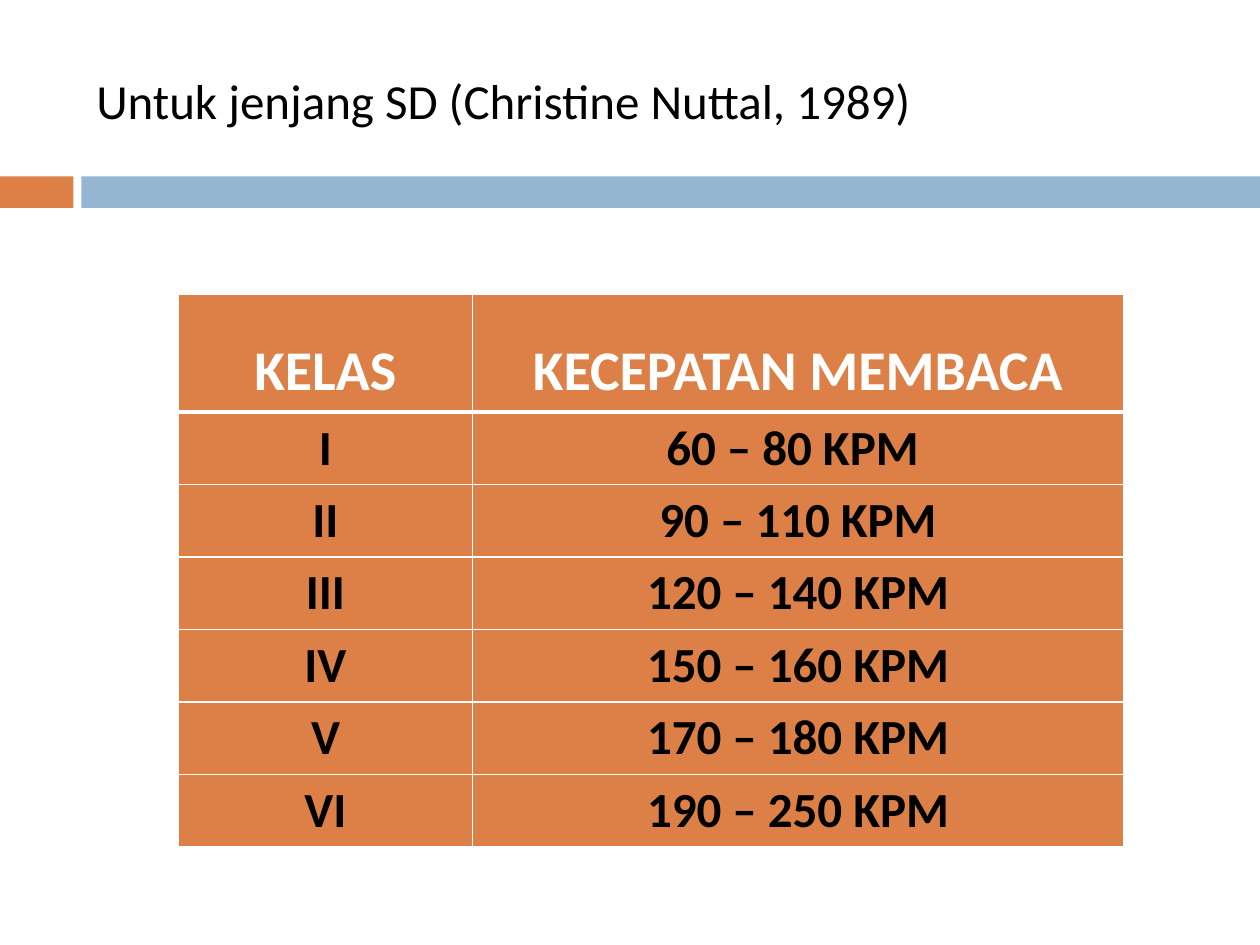
from lxml import etree
from pptx import Presentation
from pptx.dml.color import RGBColor
from pptx.enum.shapes import MSO_SHAPE
from pptx.enum.text import MSO_ANCHOR as ANCHOR, PP_ALIGN as ALIGN
from pptx.oxml.ns import qn
from pptx.util import Pt

COLORS = {"orange": "DD8047", "blue": "94B6D2", "white": "FFFFFF", "black": "000000"}


def rgb(name):
    return RGBColor.from_string(COLORS[name])


def put_text(tf, text, size=28, color="black", bold=False, align=ALIGN.LEFT):
    tf.word_wrap = True
    p = tf.paragraphs[0]
    p.alignment = align
    r = p.add_run()
    r.text = text
    r.font.name = "Calibri"
    r.font.size = Pt(size)
    r.font.bold = bold
    r.font.color.rgb = rgb(color)


prs = Presentation()
prs.slide_width, prs.slide_height = Pt(720), Pt(540)
s = prs.slides.add_slide(prs.slide_layouts[6])

# Band under the title
for left, width, color in [(0, 42, "orange"), (46.5, 673.5, "blue")]:
    sp = s.shapes.add_shape(MSO_SHAPE.RECTANGLE, Pt(left), Pt(100.8), Pt(width), Pt(18))
    sp.shadow.inherit = False
    sp.fill.solid()
    sp.fill.fore_color.rgb = rgb(color)
    sp.line.fill.background()

# Title
title = s.shapes.add_textbox(Pt(48), Pt(18), Pt(642), Pt(78))
title.text_frame.vertical_anchor = ANCHOR.MIDDLE
put_text(title.text_frame, "Untuk jenjang SD (Christine Nuttal, 1989)")

# Reading speed table
rows = [
    ("KELAS", "KECEPATAN MEMBACA"),
    ("I", "60 – 80 KPM "),
    ("II", "90 – 110 KPM"),
    ("III", "120 – 140 KPM"),
    ("IV", "150 – 160 KPM"),
    ("V", "170 – 180 KPM"),
    ("VI", "190 – 250 KPM"),
]
HEADER_H, ROW_H = 67.5, 41.4
table = s.shapes.add_table(len(rows), 2, Pt(102), Pt(168), Pt(540),
                           Pt(HEADER_H + ROW_H * (len(rows) - 1))).table
for column, width in zip(table.columns, (168, 372)):
    column.width = Pt(width)

for i, row in enumerate(rows):
    header = i == 0
    table.rows[i].height = Pt(HEADER_H if header else ROW_H)
    for j, text in enumerate(row):
        cell = table.cell(i, j)
        # White borders, thicker between header and body
        tc_pr = cell._tc.get_or_add_tcPr()
        for side in "LRTB":
            thick = (header and side == "B") or (i == 1 and side == "T")
            ln = etree.SubElement(tc_pr, qn(f"a:ln{side}"), w=str(Pt(3 if thick else 1)))
            fill = etree.SubElement(ln, qn("a:solidFill"))
            etree.SubElement(fill, qn("a:srgbClr"), val=COLORS["white"])
        cell.fill.solid()
        cell.fill.fore_color.rgb = rgb("orange")
        cell.vertical_anchor = ANCHOR.BOTTOM if header else ANCHOR.TOP
        put_text(cell.text_frame, text, size=32 if header else 28, bold=True,
                 color="white" if header else "black", align=ALIGN.CENTER)

prs.save("out.pptx")
